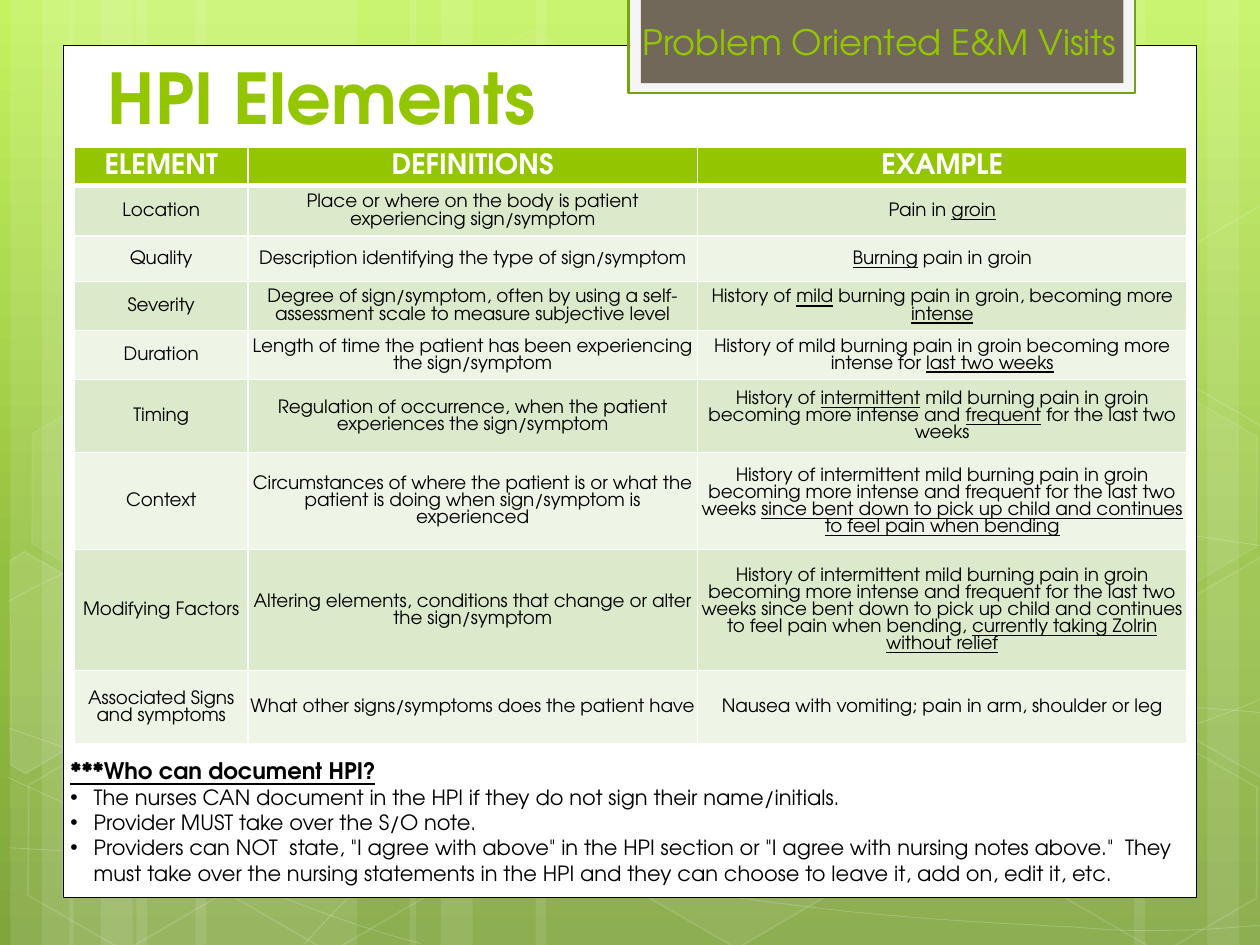
import copy
from dataclasses import dataclass
from typing import NamedTuple, Optional

import pptx
import pptx.dml.color
import pptx.enum.shapes
import pptx.enum.text
import pptx.oxml
import pptx.oxml.ns
import pptx.util

Cm = pptx.util.Cm
Pt = pptx.util.Pt
qn = pptx.oxml.ns.qn
KIND = pptx.enum.shapes.MSO_SHAPE
MID = pptx.enum.text.MSO_ANCHOR.MIDDLE
CENTER = pptx.enum.text.PP_ALIGN.CENTER
NS = pptx.oxml.ns.nsdecls("a")


@dataclass(frozen=True)
class Theme:
    font: str = "TeX Gyre Adventor"
    green: str = "94C600"
    white: str = "FFFFFF"
    black: str = "000000"
    edge: str = "74A510"
    pale: str = "F5F5F5"
    brown: str = "71685A"
    bands: tuple = ("DCEACC", "EEF5E7")
    sky: tuple = ((0, "C3F35F"), (0.62, "93BF3F"), (1, "81A53E"))
    title: float = 40
    badge: float = 20
    head: float = 16
    lead: float = 13
    note: float = 12
    cell: float = 10.5


class Box(NamedTuple):
    x: float
    y: float
    w: float
    h: float


class Paint(NamedTuple):
    fill: Optional[str] = None
    glass: int = 100  # opacity of the fill, percent
    line: Optional[str] = None
    width: float = 1
    sheen: int = 100  # opacity of the line, percent


class Hex(NamedTuple):
    x: float
    y: float
    glass: int
    sheen: int


T = Theme()
WIDE, HIGH = 25.4, 19.05
TURN = 30

# Backdrop: x and width of each light stripe
STRIPES = [(2.75, 4.45), (0.21, 1.27), (0.85, 2.12), (3.94, 4.45), (1.4, 1.27), (2.04, 2.12),
           (18.63, 4.45), (24.34, 1.27), (22.86, 2.12), (10.8, 7.83), (8.26, 1.27), (8.89, 2.12)]

# Bezier chains: a start, then three points for each piece
CURVES = [
    [(0.18, 17.09), (1.55, 17.17), (2.92, 17.25), (4.83, 17.22), (6.73, 17.2), (9.09, 17.15),
     (11.63, 16.89), (14.17, 16.64), (17.78, 16.15), (20.12, 15.67), (22.43, 15.19),
     (24.82, 14.43), (25.58, 14)],
    [(0.18, 12.12), (0.91, 11.71), (1.65, 11.33), (3.07, 10.95), (4.52, 10.57), (6.58, 10.01),
     (8.81, 9.83), (11.07, 9.65), (13.82, 9.63), (16.61, 9.83), (19.41, 10.03),
     (24.05, 10.82), (25.58, 11.02)],
    [(0.15, 15.67), (3.23, 17.07), (6.27, 18.47), (8.48, 19.02)],
    [(0.18, 14.68), (0.97, 14.96), (1.78, 15.24), (3.25, 15.65), (4.72, 16.03), (6.93, 16.66),
     (9.07, 17.09), (11.18, 17.53), (13.84, 17.98), (15.95, 18.24), (18.06, 18.52),
     (20.32, 18.62), (21.67, 18.69), (22.99, 18.8), (23.34, 18.75), (24, 18.75),
     (24.66, 18.72), (25.12, 18.67), (25.58, 18.64)],
    [(6.15, 19.02), (6.6, 18.52), (7.06, 18.01), (7.67, 17.55), (8.28, 17.09), (9.14, 16.59),
     (9.86, 16.23), (10.57, 15.88), (11, 15.72), (11.94, 15.47), (12.85, 15.21),
     (14.55, 14.86), (15.44, 14.68), (16.36, 14.5), (16.48, 14.5), (17.27, 14.45),
     (18.06, 14.38), (19.3, 14.3), (20.17, 14.27), (21.06, 14.25), (22.5, 14.27),
     (22.5, 14.27), (23.07, 14.27), (23.64, 14.27), (24.21, 14.27), (24.66, 14.3),
     (25.1, 14.33), (25.55, 14.38)],
]
HEXES = [Hex(8.48, 0.91, 4, 8), Hex(12.62, 14.96, 6, 12), Hex(0.28, 15.01, 0, 12),
         Hex(0.36, 7.92, 7, 8), Hex(4.42, 15.04, 0, 12), Hex(19.13, 11.51, 10, 12),
         Hex(21.18, 15.06, 0, 12), Hex(21.18, 7.98, 7, 8)]

# Cut hexagons, drawn upright from their own corner and then turned
LEFT = [(0, 0.3), (0.15, 0), (2.41, 0), (3.5, 1.95), (2.41, 3.86), (2.06, 3.86)]
RIGHT = [(0, 1.92), (1.09, 0), (1.33, 0), (3.45, 3.68), (3.35, 3.86), (1.12, 3.86)]
CUTS = [(LEFT, Hex(-0.84, 11.66, 10, 12)), (RIGHT, Hex(23.29, 11.28, 4, 12)),
        (RIGHT, Hex(23.29, 4.19, 0, 12))]

# Table: _underscores_ enclose underlined words
COLS = [3.5, 9.06, 9.87]
TALL = [0.77, 1.02, 0.91, 0.99, 0.99, 1.47, 1.96, 2.44, 1.47]
PAIN = "History of intermittent mild burning pain in groin becoming more intense and frequent for the last two weeks "
ROWS = [
    ("ELEMENT", "DEFINITIONS", "EXAMPLE"),
    ("Location", "Place or where on the body is patient experiencing sign/symptom", "Pain in _groin_"),
    ("Quality", "Description identifying the type of sign/symptom", "_Burning_ pain in groin"),
    ("Severity", "Degree of sign/symptom, often by using a self-assessment scale to measure subjective level",
     "History of _mild_ burning pain in groin, becoming more _intense_"),
    ("Duration", "Length of time the patient has been experiencing the sign/symptom",
     "History of mild burning pain in groin becoming more intense for _last two weeks_"),
    ("Timing", "Regulation of occurrence, when the patient experiences the sign/symptom",
     "History of _intermittent_ mild burning pain in groin becoming more intense and _frequent_ for the last two weeks"),
    ("Context", "Circumstances of where the patient is or what the patient is doing when sign/symptom is experienced",
     PAIN + "_since bent down to pick up child and continues to feel pain when bending_"),
    ("Modifying Factors", "Altering elements, conditions that change or alter the sign/symptom",
     PAIN + "since bent down to pick up child and continues to feel pain when bending, "
     "_currently taking Zolrin without relief_"),
    ("Associated Signs and symptoms", "What other signs/symptoms does the patient have",
     "Nausea with vomiting; pain in arm, shoulder or leg"),
]
NOTES = [
    "The nurses CAN document in the HPI if they do not sign their name/initials.",
    "Provider MUST take over the S/O note.",
    'Providers can NOT  state, "I agree with above" in the HPI section or "I agree with nursing notes above."  '
    "They must take over the nursing statements in the HPI and they can choose to leave it, add on, edit it, etc.",
]


def tint(fill, color: str, glass: int = 100) -> None:
    fill.solid()
    fill.fore_color.rgb = pptx.dml.color.RGBColor.from_string(color)
    if glass < 100:
        node = fill._xPr.find(qn("a:solidFill"))[0]
        node.append(pptx.oxml.parse_xml(f'<a:alpha {NS} val="{glass * 1000}"/>'))


def coat(shape, paint: Paint) -> None:
    shape.shadow.inherit = False
    if paint.fill and paint.glass:
        tint(shape.fill, paint.fill, paint.glass)
    else:
        shape.fill.background()
    if paint.line:
        shape.line.width = Pt(paint.width)
        tint(shape.line.fill, paint.line, paint.sheen)
    else:
        shape.line.fill.background()


def block(slide, box: Box, paint: Paint, kind=KIND.RECTANGLE):
    shape = slide.shapes.add_shape(kind, *map(Cm, box))
    coat(shape, paint)
    return shape


def trace(slide, dots: list, paint: Paint, close: bool = False):
    pen, *rest = [(Cm(x), Cm(y)) for x, y in dots]
    draft = slide.shapes.build_freeform(*pen)
    draft.add_line_segments(rest, close=close)
    shape = draft.convert_to_shape()
    coat(shape, paint)
    return shape


def bend(shape) -> None:
    """Turn each three straight segments into one cubic Bezier piece."""
    lines = list(shape._element.iter(qn("a:lnTo")))
    for i in range(0, len(lines), 3):
        curve = pptx.oxml.parse_xml(f"<a:cubicBezTo {NS}/>")
        lines[i].addprevious(curve)
        for line in lines[i:i + 3]:
            curve.append(line[0])
            line.getparent().remove(line)


def write(frame, text: str, *, size: float, color: str = T.black, bold: bool = False,
          align=None, bullet: bool = False) -> None:
    """Add one paragraph; words between underscores are underlined."""
    para = frame.paragraphs[0] if not frame.text else frame.add_paragraph()
    para.alignment = align
    if bullet:
        props = para._p.get_or_add_pPr()
        props.set("marL", str(Cm(0.47)))
        props.set("indent", str(-Cm(0.47)))
        props.append(pptx.oxml.parse_xml(f'<a:buFont {NS} typeface="Arial"/>'))
        props.append(pptx.oxml.parse_xml(f'<a:buChar {NS} char="•"/>'))
    for i, part in enumerate(text.split("_")):
        if part:
            run = para.add_run()
            run.text = part
            run.font.name, run.font.size, run.font.bold = T.font, Pt(size), bold
            run.font.underline = bool(i % 2)
            tint(run.font.fill, color)


def label(slide, box: Box, anchor=None):
    frame = slide.shapes.add_textbox(*map(Cm, box)).text_frame
    frame.word_wrap, frame.vertical_anchor = True, anchor
    return frame


def rule(cell, **sides: float) -> None:
    for side, width in sides.items():
        cell._tc.get_or_add_tcPr().append(pptx.oxml.parse_xml(
            f'<a:ln{side} {NS} w="{Pt(width)}"><a:solidFill>'
            f'<a:srgbClr val="{T.white}"/></a:solidFill></a:ln{side}>'))


def backdrop(slide) -> None:
    fill = slide.background.fill
    fill.gradient()
    fill.gradient_angle = 270
    stops = next(slide.element.iter(qn("a:gsLst")))
    stops.append(copy.deepcopy(stops[-1]))
    for stop, (place, color) in zip(fill.gradient_stops, T.sky):
        stop.position = place
        stop.color.rgb = pptx.dml.color.RGBColor.from_string(color)
    for x, w in STRIPES:
        block(slide, Box(x, 0, w, HIGH), Paint(T.white, 10))
    for knots in CURVES:
        bend(trace(slide, knots, Paint(line=T.white, width=0.5, sheen=20)))
    for item in HEXES:
        shape = block(slide, Box(item.x, item.y, 4.45, 3.86),
                      Paint(T.white, item.glass, T.white, 1, item.sheen), KIND.HEXAGON)
        shape.adjustments[0], shape.adjustments[1] = 0.285, 1.155
        shape.rotation = TURN
    for dots, item in CUTS:
        shape = trace(slide, [(item.x + x, item.y + y) for x, y in dots],
                      Paint(T.white, item.glass, T.white, 1, item.sheen), close=True)
        shape.rotation = TURN


def grid(slide) -> None:
    table = slide.shapes.add_table(len(ROWS), len(COLS), Cm(1.5), Cm(2.97),
                                   Cm(sum(COLS)), Cm(sum(TALL))).table
    table.first_row = table.horz_banding = False
    for col, w in zip(table.columns, COLS):
        col.width = Cm(w)
    for r, (row, h) in enumerate(zip(ROWS, TALL)):
        table.rows[r].height = Cm(h)
        head = r == 0
        for c, text in enumerate(row):
            cell = table.cell(r, c)
            cell.margin_left = cell.margin_right = cell.margin_top = Cm(0.03)
            cell.margin_bottom, cell.vertical_anchor = 0, MID
            rule(cell, L=1, R=1, T=3 if r == 1 else 1, B=3 if head else 1)
            tint(cell.fill, T.green if head else T.bands[(r - 1) % 2])
            write(cell.text_frame, text, size=T.head if head else T.cell, bold=head,
                  color=T.white if head else T.black, align=CENTER)


def main() -> None:
    deck = pptx.Presentation()
    deck.slide_width, deck.slide_height = Cm(WIDE), Cm(HIGH)
    slide = deck.slides.add_slide(deck.slide_layouts[6])
    backdrop(slide)

    # Page and badge
    block(slide, Box(1.27, 0.91, 22.86, 17.19), Paint(T.white, line=T.black, width=0.5))
    block(slide, Box(12.67, -0.05, 10.21, 1.93), Paint(T.pale, line=T.edge, width=1.25))
    block(slide, Box(12.92, -0.05, 9.73, 1.73), Paint(T.brown))

    # Title, table, notes and badge text
    write(label(slide, Box(1.92, 0.85, 10.44, 2.21), MID), "HPI Elements",
          size=T.title, color=T.green, bold=True)
    grid(slide)
    notes = label(slide, Box(1.17, 15.14, 23.06, 2.87))
    write(notes, "_***Who can document HPI?_", size=T.lead, bold=True)
    for note in NOTES:
        write(notes, note, size=T.note, bullet=True)
    write(label(slide, Box(12.7, -0.03, 10.16, 1.73), MID), "Problem Oriented E&M Visits",
          size=T.badge, color=T.green)
    deck.save("out.pptx")


if __name__ == "__main__":
    main()
